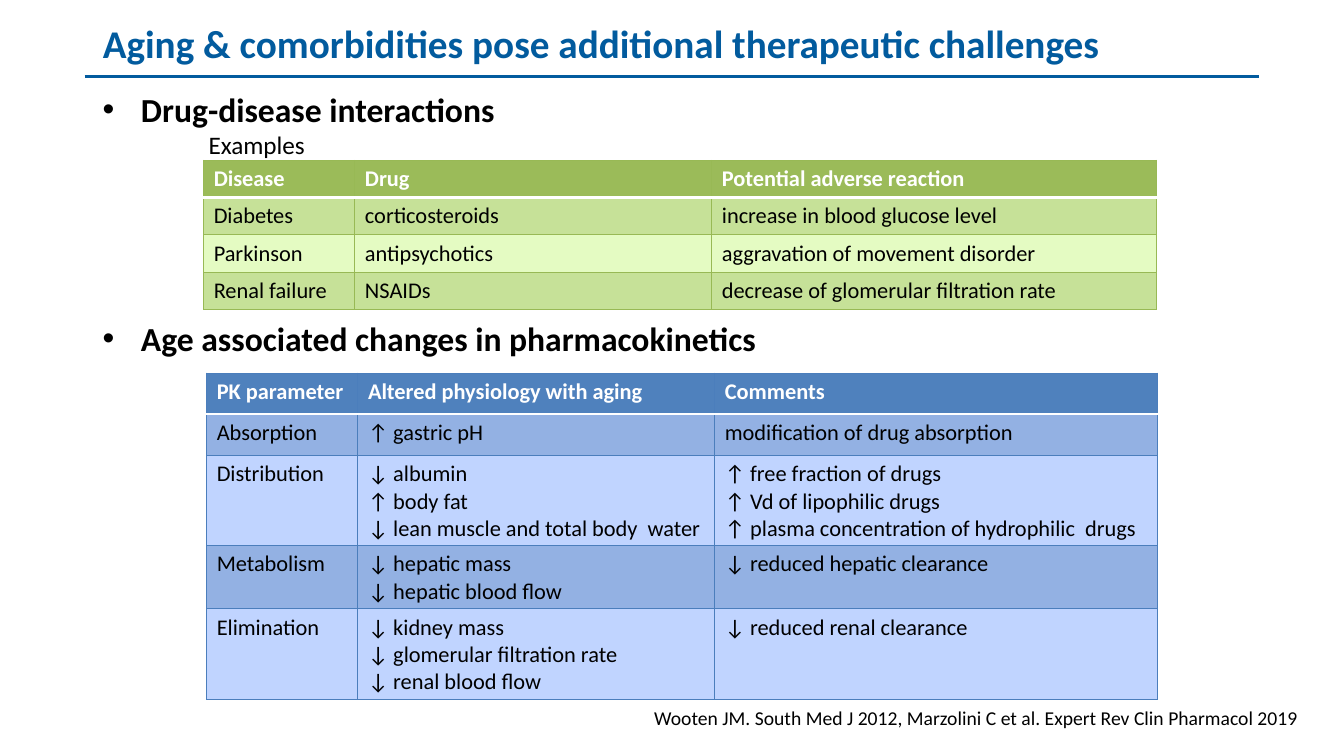
from lxml.etree import SubElement
from pptx import Presentation
from pptx.dml.color import RGBColor
from pptx.enum.shapes import MSO_CONNECTOR
from pptx.enum.text import MSO_ANCHOR, MSO_AUTO_SIZE, PP_ALIGN
from pptx.oxml.ns import qn
from pptx.util import Inches, Pt

FONT = "Calibri"
COLORS = {
    "title": "025B9E", "black": "000000", "white": "FFFFFF",
    "green": "9BBB59", "green_line": "98B955", "green_dark": "C6E198", "green_light": "E4FBC2",
    "blue": "4F81BD", "blue_line": "4B7EBC", "blue_dark": "93B1E3", "blue_light": "C0D4FF",
}
INTERACTIONS = [
    ["Disease", "Drug", "Potential adverse reaction"],
    ["Diabetes", "corticosteroids", "increase in blood glucose level"],
    ["Parkinson", "antipsychotics", "aggravation of movement disorder"],
    ["Renal failure", "NSAIDs", "decrease of glomerular filtration rate"],
]
PHARMACOKINETICS = [
    ["PK parameter", "Altered physiology with aging", "Comments"],
    ["Absorption", "↑ gastric pH", "modification of drug absorption"],
    ["Distribution",
     "↓ albumin\n↑ body fat\n↓ lean muscle and total body  water",
     "↑ free fraction of drugs\n↑ Vd of lipophilic drugs\n"
     "↑ plasma concentration of hydrophilic  drugs"],
    ["Metabolism", "↓ hepatic mass\n↓ hepatic blood flow", "↓ reduced hepatic clearance"],
    ["Elimination", "↓ kidney mass\n↓ glomerular filtration rate\n↓ renal blood flow",
     "↓ reduced renal clearance"],
]


def rgb(name):
    """Return the named colour."""
    return RGBColor.from_string(COLORS[name])


def format_text(text_frame, size, color="black", bold=False):
    """Set the font of every run in a text frame."""
    for paragraph in text_frame.paragraphs:
        for run in paragraph.runs:
            run.font.name = FONT
            run.font.size = Pt(size)
            run.font.bold = bold
            run.font.color.rgb = rgb(color)


def add_title(slide, text):
    """Fill and place the title placeholder."""
    title = slide.shapes.title
    title.left, title.top = Inches(0.92), Inches(0.14)
    title.width, title.height = Inches(10.59), Inches(0.57)
    text_frame = title.text_frame
    text_frame.text = text
    text_frame.auto_size = MSO_AUTO_SIZE.NONE
    text_frame.vertical_anchor = MSO_ANCHOR.MIDDLE
    text_frame.paragraphs[0].alignment = PP_ALIGN.LEFT
    format_text(text_frame, 28, "title", True)


def add_title_rule(slide):
    """Draw the line under the title."""
    y = Inches(0.76)
    rule = slide.shapes.add_connector(MSO_CONNECTOR.STRAIGHT, Inches(0.84), y, Inches(12.49), y)
    rule.line.color.rgb = rgb("title")
    rule.line.width = Pt(2.25)
    SubElement(rule._element.spPr, qn("a:effectLst"))


def add_text(slide, text, left, top, width, height, size, bold=False, wrap=False):
    """Add a text box and return its text frame."""
    box = slide.shapes.add_textbox(Inches(left), Inches(top), Inches(width), Inches(height))
    text_frame = box.text_frame
    text_frame.word_wrap = wrap
    text_frame.text = text
    format_text(text_frame, size, bold=bold)
    return text_frame


def add_bullet_heading(slide, text, top):
    """Add a bulleted section heading."""
    text_frame = add_text(slide, text, 0.92, top, 9.72, 0.38, 24, bold=True, wrap=True)
    paragraph = text_frame.paragraphs[0]
    paragraph.line_spacing = Pt(20)
    properties = paragraph._p.get_or_add_pPr()
    properties.set("marL", str(Inches(0.38)))
    properties.set("indent", str(-Inches(0.38)))
    SubElement(properties, qn("a:buFont"), typeface="Arial")
    SubElement(properties, qn("a:buChar"), char="•")


def add_border(cell, side, color, width):
    """Draw one side (L, R, T or B) of a cell."""
    line = SubElement(cell._tc.get_or_add_tcPr(), qn(f"a:ln{side}"), w=str(Pt(width)))
    fill = SubElement(line, qn("a:solidFill"))
    SubElement(fill, qn("a:srgbClr"), val=COLORS[color])


def format_cell(cell, row, theme):
    """Set the borders, fill and font of a cell from its row."""
    white_sides = {0: "B", 1: "T"}.get(row, "")
    for side in "LRTB":
        if side in white_sides:
            add_border(cell, side, "white", 2)
        else:
            add_border(cell, side, f"{theme}_line", 0.75)
    header = row == 0
    band = theme if header else f"{theme}_dark" if row % 2 else f"{theme}_light"
    cell.fill.solid()
    cell.fill.fore_color.rgb = rgb(band)
    cell.margin_bottom = Inches(0.03)
    format_text(cell.text_frame, 16, "white" if header else "black", header)


def add_banded_table(slide, rows, left, top, widths, heights, theme):
    """Add a table with a coloured header and banded rows."""
    frame = slide.shapes.add_table(len(rows), len(widths), Inches(left), Inches(top),
                                   Inches(sum(widths)), Inches(sum(heights)))
    table = frame.table
    table.horz_banding = False
    for column, width in zip(table.columns, widths):
        column.width = Inches(width)
    for table_row, height in zip(table.rows, heights):
        table_row.height = Inches(height)
    for row, texts in enumerate(rows):
        for column, text in enumerate(texts):
            cell = table.cell(row, column)
            cell.text_frame.text = text
            format_cell(cell, row, theme)


def main():
    """Build the slide and save it."""
    presentation = Presentation()
    presentation.slide_width, presentation.slide_height = Inches(13.33), Inches(7.5)
    slide = presentation.slides.add_slide(presentation.slide_layouts[5])
    add_title(slide, "Aging & comorbidities pose additional therapeutic challenges")
    add_title_rule(slide)
    add_bullet_heading(slide, "Drug-disease interactions", 0.95)
    add_text(slide, "Examples", 1.97, 1.23, 1.17, 0.4, 18)
    add_banded_table(slide, INTERACTIONS, 2.02, 1.59, [1.5, 3.54, 4.41], [0.37] * 4, "green")
    add_bullet_heading(slide, "Age associated changes in pharmacokinetics", 3.23)
    add_banded_table(slide, PHARMACOKINETICS, 2.05, 3.7, [1.5, 3.54, 4.39],
                     [0.41, 0.41, 0.89, 0.63, 0.9], "blue")
    add_text(slide, "Wooten JM. South Med J 2012, Marzolini C et al. Expert Rev Clin Pharmacol 2019",
             6.39, 6.95, 6.65, 0.34, 14)
    presentation.save("out.pptx")


if __name__ == "__main__":
    main()
